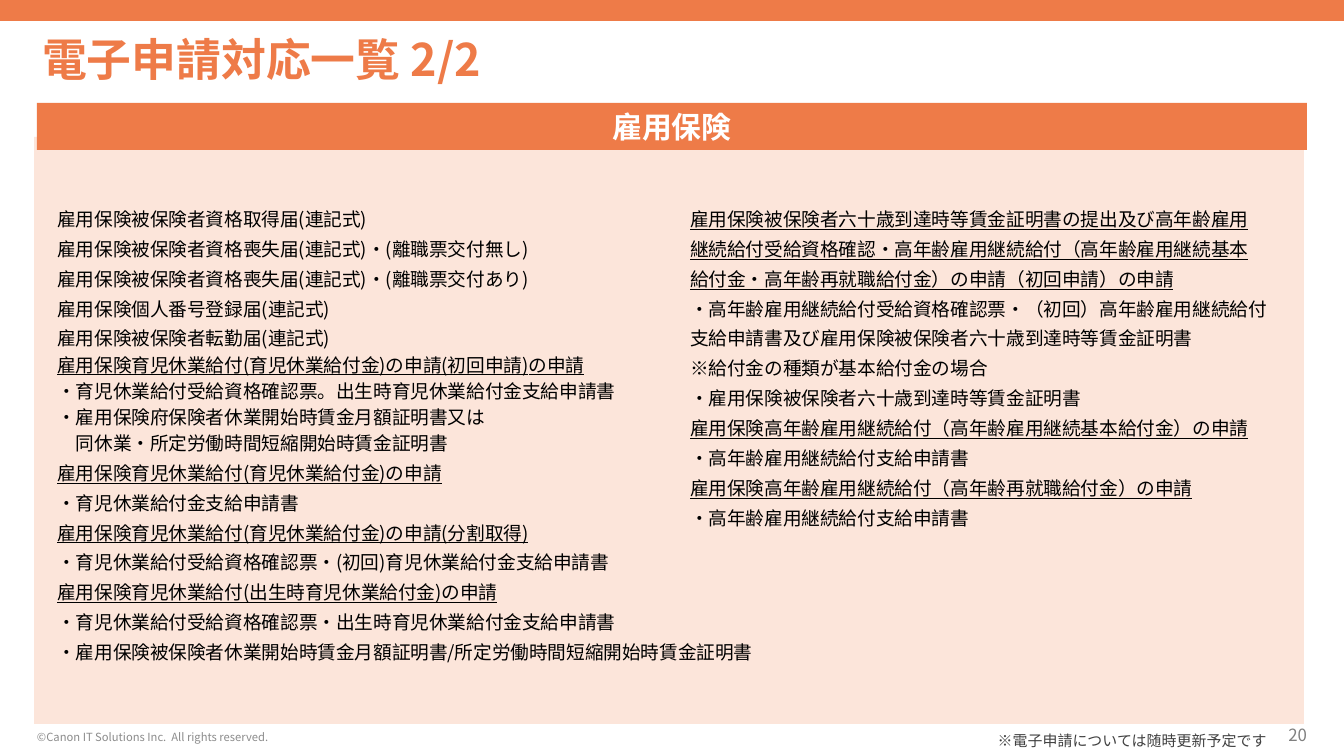
from pptx import Presentation
from pptx.dml.color import RGBColor
from pptx.enum.shapes import MSO_SHAPE
from pptx.enum.text import MSO_ANCHOR, PP_ALIGN
from pptx.oxml.ns import qn
from pptx.util import Emu, Pt

RECT = MSO_SHAPE.RECTANGLE
MID, LOW, TOP = MSO_ANCHOR.MIDDLE, MSO_ANCHOR.BOTTOM, MSO_ANCHOR.TOP
LEFT, MID_X, RIGHT = PP_ALIGN.LEFT, PP_ALIGN.CENTER, PP_ALIGN.RIGHT
FACE = "Noto Sans CJK JP"
ORANGE = RGBColor(0xEE, 0x7B, 0x48)
PEACH = RGBColor(0xFC, 0xE5, 0xDA)
WHITE = RGBColor(0xFF, 0xFF, 0xFF)
BLACK = RGBColor(0, 0, 0)
DARK = RGBColor(0x40, 0x40, 0x40)
GRAY = RGBColor(0x80, 0x80, 0x80)
PALE = RGBColor(0x8C, 0x8C, 0x8C)
SCALE = 914400 / 134.4


def px(*nums):
    return [Emu(round(n * SCALE)) for n in nums]


def write(para, text, align, **form):
    para.alignment = align
    run = para.add_run()
    run.text = text
    font = run.font
    font.color.rgb = form.pop("color")
    for key, val in {"name": FACE, **form}.items():
        setattr(font, key, val)
    east = font._element.makeelement(qn("a:ea"), {"typeface": FACE})
    font._element.find(qn("a:latin")).addnext(east)


deck = Presentation()
deck.slide_width, deck.slide_height = px(1344, 756)
slide = deck.slides.add_slide(deck.slide_layouts[5])
shapes = slide.shapes

title = shapes.title
title.left, title.top, title.width, title.height = px(42, 33, 1058, 52)
frame = title.text_frame
for key, val in {"margin_left": 0, "margin_right": 0, "margin_top": 0,
                 "margin_bottom": 0, "vertical_anchor": MID}.items():
    setattr(frame, key, val)
write(frame.paragraphs[0], "電子申請対応一覧 2/2", LEFT,
      size=Pt(24), bold=True, color=ORANGE)

for box, fill, text in [
    ((0, 0, 1344, 21), ORANGE, ""),
    ((34, 137, 1270, 587), PEACH, ""),
    ((37, 103, 1270, 47), ORANGE, "雇用保険"),
]:
    bar = shapes.add_shape(RECT, *px(*box))
    bar.shadow.inherit = False
    bar.fill.solid()
    bar.fill.fore_color.rgb = fill
    bar.line.fill.background()
    if text:
        bar.text_frame.vertical_anchor = MID
        write(bar.text_frame.paragraphs[0], text, MID_X,
              size=Pt(16), bold=True, color=WHITE)

for box, text, size, color, align, form in [
    ((1254, 725, 53, 20), "20", 9, GRAY, RIGHT, {"vertical_anchor": LOW}),
    ((37, 724, 317, 20), "©Canon IT Solutions Inc.  All rights reserved.", 6,
     PALE, LEFT, {"vertical_anchor": LOW}),
    ((965, 724, 315, 32), "※電子申請については随時更新予定です", 8, DARK, RIGHT,
     {"vertical_anchor": MID, "margin_left": px(13)[0], "margin_right": px(13)[0]}),
]:
    frame = shapes.add_textbox(*px(*box)).text_frame
    base = {"word_wrap": True, "margin_left": 0, "margin_right": 0,
            "margin_top": 0, "margin_bottom": 0}
    for key, val in {**base, **form}.items():
        setattr(frame, key, val)
    write(frame.paragraphs[0], text, align, size=Pt(size), color=color)

right = [
    (16, True, "雇用保険被保険者六十歳到達時等賃金証明書の提出及び高年齢雇用"),
    (16, True, "継続給付受給資格確認・高年齢雇用継続給付（高年齢雇用継続基本"),
    (16, True, "給付金・高年齢再就職給付金）の申請（初回申請）の申請"),
    (16, False, "・高年齢雇用継続給付受給資格確認票・（初回）高年齢雇用継続給付"),
    (16, False, "支給申請書及び雇用保険被保険者六十歳到達時等賃金証明書"),
    (16, False, "※給付金の種類が基本給付金の場合"),
    (16, False, "・雇用保険被保険者六十歳到達時等賃金証明書"),
    (16, True, "雇用保険高年齢雇用継続給付（高年齢雇用継続基本給付金）の申請"),
    (16, False, "・高年齢雇用継続給付支給申請書"),
    (16, True, "雇用保険高年齢雇用継続給付（高年齢再就職給付金）の申請"),
    (16, False, "・高年齢雇用継続給付支給申請書"),
]
left = [
    (16, False, "雇用保険被保険者資格取得届(連記式)"),
    (16, False, "雇用保険被保険者資格喪失届(連記式)・(離職票交付無し)"),
    (16, False, "雇用保険被保険者資格喪失届(連記式)・(離職票交付あり)"),
    (16, False, "雇用保険個人番号登録届(連記式)"),
    (16, False, "雇用保険被保険者転勤届(連記式)"),
    (14, True, "雇用保険育児休業給付(育児休業給付金)の申請(初回申請)の申請"),
    (14, False, "・育児休業給付受給資格確認票。出生時育児休業給付金支給申請書"),
    (14, False, "・雇用保険府保険者休業開始時賃金月額証明書又は"),
    (14, False, "　同休業・所定労働時間短縮開始時賃金証明書"),
    (16, True, "雇用保険育児休業給付(育児休業給付金)の申請"),
    (16, False, "・育児休業給付金支給申請書"),
    (16, True, "雇用保険育児休業給付(育児休業給付金)の申請(分割取得)"),
    (16, False, "・育児休業給付受給資格確認票・(初回)育児休業給付金支給申請書"),
    (16, True, "雇用保険育児休業給付(出生時育児休業給付金)の申請"),
    (16, False, "・育児休業給付受給資格確認票・出生時育児休業給付金支給申請書"),
    (16, False, "・雇用保険被保険者休業開始時賃金月額証明書/所定労働時間短縮開始時賃金証明書"),
]
for box, lines in [((677, 194, 625, 478), right), ((44, 194, 750, 478), left)]:
    frame = shapes.add_textbox(*px(*box)).text_frame
    frame.word_wrap = False
    frame.vertical_anchor = TOP
    for num, (gap, under, text) in enumerate(lines):
        para = frame.add_paragraph() if num else frame.paragraphs[0]
        para.line_spacing = Pt(gap)
        write(para, text, LEFT, size=Pt(10), underline=under, color=BLACK)

deck.save("out.pptx")
